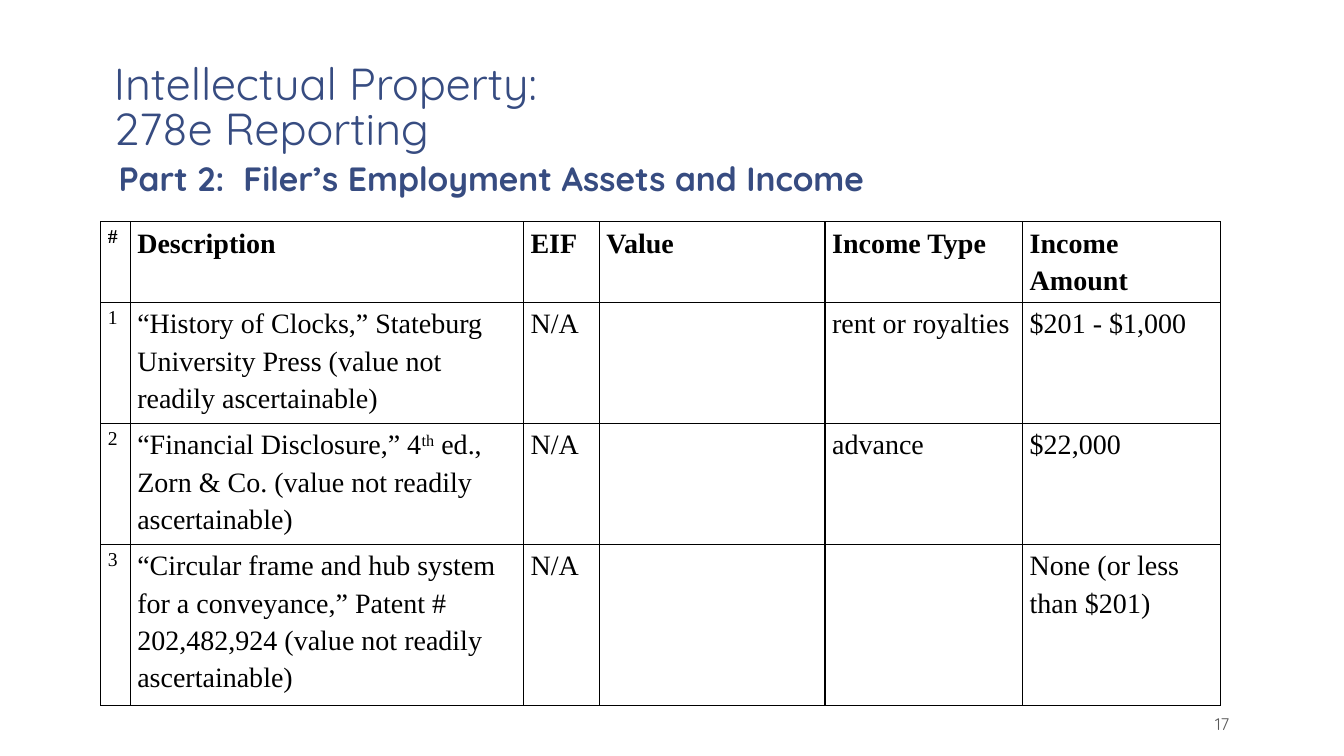
from dataclasses import dataclass
from typing import Any

from lxml import etree
from pptx import Presentation
from pptx.dml.color import RGBColor
from pptx.enum import text as t
from pptx.oxml.ns import qn
from pptx.util import Cm, Pt


@dataclass(frozen=True)
class Theme:
    navy: str = "374C81"
    gray: str = "595959"
    black: str = "000000"
    sans: str = "Quicksand"
    serif: str = "Times New Roman"
    title: int = 32
    sub: int = 24
    body: int = 20
    mark: int = 14
    foot: int = 12


@dataclass(frozen=True)
class Label:
    words: str
    box: tuple[float, float, float, float]
    size: int
    color: str
    pad: tuple[float, float] = (0.33, 0.18)
    bold: bool = False
    anchor: Any = t.MSO_ANCHOR.BOTTOM
    align: Any = t.PP_ALIGN.LEFT
    lead: float = 1.0


@dataclass(frozen=True)
class Row:
    lines: int
    cells: tuple[str, ...]


THEME = Theme()
LABELS = (
    Label("Intellectual Property:\v278e Reporting", (2.54, 0.2, 28.78, 3.89),
          THEME.title, THEME.navy, lead=0.85),
    Label("Part 2:  Filer’s Employment Assets and Income", (2.54, 3.86, 20.29, 1.27),
          THEME.sub, THEME.navy, pad=(0.45, 0.13), bold=True, anchor=t.MSO_ANCHOR.TOP),
    Label("17", (28.24, 17.78, 3.07, 0.89), THEME.foot, THEME.gray,
          align=t.PP_ALIGN.RIGHT),
)
COLS = (0.74, 9.91, 1.91, 5.69, 4.98, 4.98)
LINE = 0.945
# A caret pair encloses superscript text.
ROWS = (
    Row(2, ("#", "Description", "EIF", "Value", "Income Type", "Income Amount")),
    Row(3, ("1", "“History of Clocks,” Stateburg University Press "
            "(value not readily ascertainable)",
            "N/A", "", "rent or royalties", "$201 - $1,000")),
    Row(3, ("2", "“Financial Disclosure,” 4^th^ ed., Zorn & Co. "
            "(value not readily ascertainable)",
            "N/A", "", "advance", "$22,000")),
    Row(4, ("3", "“Circular frame and hub system for a conveyance,” "
            "Patent # 202,482,924 (value not readily ascertainable)",
            "N/A", "", "", "None (or less than $201)")),
)


def put(item: Any, form: dict[str, Any]) -> None:
    """Set each named attribute of item."""
    for key, val in form.items():
        setattr(item, key, val)


def style(font: Any, name: str, size: int, color: str, bold: bool) -> None:
    put(font, {"name": name, "size": Pt(size), "bold": bold})
    font.color.rgb = RGBColor.from_string(color)


def pads(side: float, edge: float) -> dict[str, Any]:
    return {"margin_left": Cm(side), "margin_right": Cm(side),
            "margin_top": Cm(edge), "margin_bottom": Cm(edge)}


def write(slide: Any, label: Label) -> None:
    frame = slide.shapes.add_textbox(*map(Cm, label.box)).text_frame
    put(frame, pads(*label.pad) | {"word_wrap": True, "vertical_anchor": label.anchor})
    para = frame.paragraphs[0]
    para.text = label.words
    put(para, {"alignment": label.align, "line_spacing": label.lead})
    for run in para.runs:
        style(run.font, THEME.sans, label.size, label.color, label.bold)


def edge(cell: Any) -> None:
    """Draw a thin black border on all four sides."""
    props = cell._tc.get_or_add_tcPr()
    for side in ("a:lnL", "a:lnR", "a:lnT", "a:lnB"):
        line = etree.SubElement(props, qn(side), w=str(Pt(1)))
        fill = etree.SubElement(line, qn("a:solidFill"))
        etree.SubElement(fill, qn("a:srgbClr"), val=THEME.black)


def fill(cell: Any, words: str, size: int, bold: bool) -> None:
    edge(cell)
    cell.fill.background()
    put(cell, pads(0.18, 0))
    para = cell.text_frame.paragraphs[0]
    put(para, {"line_spacing": 1.2, "space_after": Pt(10)})
    style(para.font, THEME.serif, size, THEME.black, bold)
    for n, part in enumerate(words.split("^") if words else ()):
        run = para.add_run()
        run.text = part
        style(run.font, THEME.serif, size, THEME.black, bold)
        if n % 2:
            run._r.get_or_add_rPr().set("baseline", "30000")


def grid(slide: Any) -> None:
    high = LINE * sum(row.lines for row in ROWS)
    table = slide.shapes.add_table(len(ROWS), len(COLS), Cm(2.54), Cm(5.59),
                                   Cm(sum(COLS)), Cm(high)).table
    put(table, {"first_row": False, "horz_banding": False})
    for col, wide in zip(table.columns, COLS):
        col.width = Cm(wide)
    for r, row in enumerate(ROWS):
        table.rows[r].height = Cm(LINE * row.lines)
        for c, words in enumerate(row.cells):
            size = THEME.body if c else THEME.mark
            fill(table.cell(r, c), words, size, bold=r == 0)


def main() -> None:
    deck = Presentation()
    put(deck, {"slide_width": Cm(33.87), "slide_height": Cm(19.05)})
    slide = deck.slides.add_slide(deck.slide_layouts[6])
    for label in LABELS:
        write(slide, label)
    grid(slide)
    deck.save("out.pptx")


if __name__ == "__main__":
    main()
